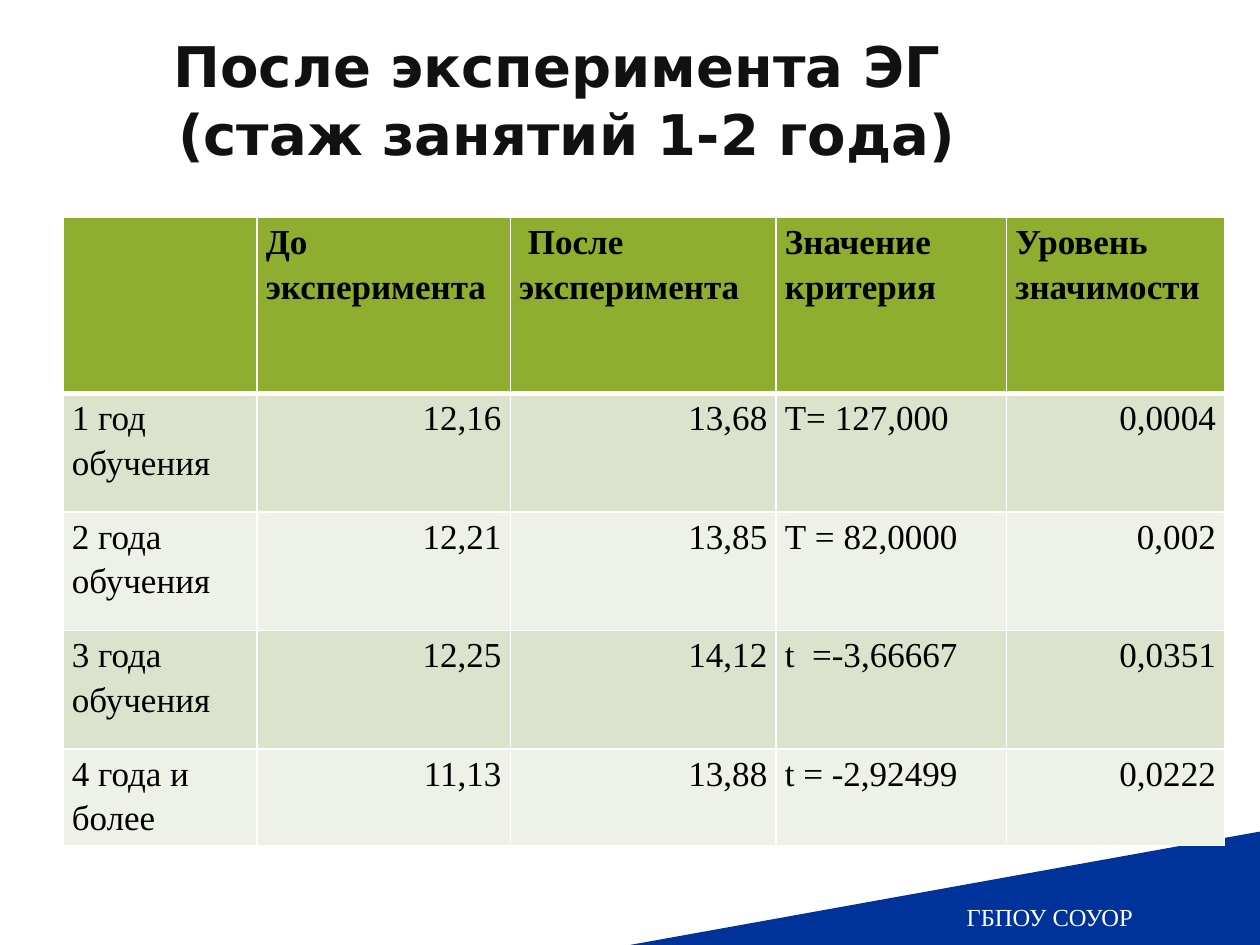
from dataclasses import dataclass

from lxml import etree
from pptx import Presentation
from pptx.dml.color import RGBColor
from pptx.enum.shapes import MSO_SHAPE
from pptx.enum.text import MSO_ANCHOR, PP_ALIGN
from pptx.oxml.ns import qn
from pptx.util import Inches, Pt

LEFT, MID, RIGHT = PP_ALIGN.LEFT, PP_ALIGN.CENTER, PP_ALIGN.RIGHT
CENTRE = MSO_ANCHOR.MIDDLE
WEDGE = MSO_SHAPE.RIGHT_TRIANGLE
WIDE, HIGH = 10, 7.5


@dataclass(frozen=True)
class Face:
    font: str
    size: int
    color: str
    bold: bool = False


@dataclass(frozen=True)
class Theme:
    title: Face = Face("DejaVu Sans", 32, "111111", True)
    head: Face = Face("Times New Roman", 20, "000000", True)
    body: Face = Face("Times New Roman", 20, "000000")
    foot: Face = Face("Times New Roman", 14, "FFFFFF")
    blue: str = "003399"
    green: str = "8FAD2F"
    bands: tuple[str, str] = ("DBE3CD", "EEF1E8")
    rule: str = "FFFFFF"


@dataclass(frozen=True)
class Box:
    """Place and size as shares of the slide."""
    x: float
    y: float
    w: float
    h: float

    def area(self) -> tuple[int, int, int, int]:
        return (Inches(self.x * WIDE), Inches(self.y * HIGH),
                Inches(self.w * WIDE), Inches(self.h * HIGH))


@dataclass(frozen=True)
class Row:
    high: float
    texts: tuple[str, ...]


THEME = Theme()
TITLE = Box(0.02, 0.06, 0.86, 0.09)
GRID = Box(0.05, 0.23, 0.92, 0.66)
WAVE = Box(0.5, 0.88, 0.5, 0.12)
COLS = (1.54, 2.01, 2.11, 1.83, 1.73)
ALIGNS = (LEFT, RIGHT, RIGHT, LEFT, RIGHT)
ROWS = (
    Row(1.4, ("", "До эксперимента", " После эксперимента",
              "Значение критерия", "Уровень значимости")),
    Row(0.94, ("1 год обучения", "12,16", "13,68", "Т= 127,000", "0,0004")),
    Row(0.94, ("2 года обучения", "12,21", "13,85", "Т = 82,0000", "0,002")),
    Row(0.94, ("3 года обучения", "12,25", "14,12", "t  =-3,66667", "0,0351")),
    Row(0.71, ("4 года и более", "11,13", "13,88", "t = -2,92499", "0,0222")),
)


def tint(hue: str) -> RGBColor:
    return RGBColor.from_string(hue)


def write(para, text: str, face: Face) -> None:
    run = para.add_run()
    run.text = text
    font = run.font
    font.name, font.size, font.bold = face.font, Pt(face.size), face.bold
    font.color.rgb = tint(face.color)


def edge(cell, low: int) -> None:
    """Rule all four sides of a cell, the lower one at its own width."""
    props = cell._tc.get_or_add_tcPr()
    widths = {"a:lnL": 1, "a:lnR": 1, "a:lnT": 1, "a:lnB": low}
    for spot, (tag, width) in enumerate(widths.items()):
        line = etree.Element(qn(tag), w=str(Pt(width)))
        fill = etree.SubElement(line, qn("a:solidFill"))
        etree.SubElement(fill, qn("a:srgbClr"), val=THEME.rule)
        props.insert(spot, line)


def fill_cell(cell, text: str, face: Face, align: PP_ALIGN, hue: str) -> None:
    cell.fill.solid()
    cell.fill.fore_color.rgb = tint(hue)
    cell.margin_left = cell.margin_right = Inches(0.07)
    cell.margin_top = cell.margin_bottom = 0
    para = cell.text_frame.paragraphs[0]
    para.alignment, para.line_spacing = align, 1.15
    if text:
        write(para, text, face)


def draw_wave(slide) -> None:
    wave = slide.shapes.add_shape(WEDGE, *WAVE.area())
    wave.shadow.inherit = False
    wave._element.spPr.xfrm.set("flipH", "1")
    wave.fill.solid()
    wave.fill.fore_color.rgb = tint(THEME.blue)
    wave.line.fill.background()
    wave.text_frame.vertical_anchor = CENTRE
    para = wave.text_frame.paragraphs[0]
    para.alignment = MID
    write(para, "ГБПОУ СОУОР", THEME.foot)


def draw_title(slide) -> None:
    frame = slide.shapes.add_textbox(*TITLE.area()).text_frame
    frame.word_wrap = True
    frame.vertical_anchor = CENTRE
    para = frame.paragraphs[0]
    para.alignment = MID
    write(para, "После эксперимента ЭГ ", THEME.title)
    para.add_line_break()
    write(para, "(стаж занятий 1-2 года)", THEME.title)


def draw_grid(slide) -> None:
    shape = slide.shapes.add_table(len(ROWS), len(COLS), *GRID.area())
    table = shape.table
    for col, wide in zip(table.columns, COLS):
        col.width = Inches(wide)
    for r, row in enumerate(ROWS):
        table.rows[r].height = Inches(row.high)
        head = r == 0
        face = THEME.head if head else THEME.body
        hue = THEME.green if head else THEME.bands[(r - 1) % 2]
        for c, text in enumerate(row.texts):
            cell = table.cell(r, c)
            fill_cell(cell, text, face, LEFT if head else ALIGNS[c], hue)
            edge(cell, 3 if head else 1)


def main() -> None:
    deck = Presentation()
    deck.slide_width, deck.slide_height = Inches(WIDE), Inches(HIGH)
    slide = deck.slides.add_slide(deck.slide_layouts[6])
    draw_wave(slide)
    draw_title(slide)
    draw_grid(slide)
    deck.save("out.pptx")


if __name__ == "__main__":
    main()
